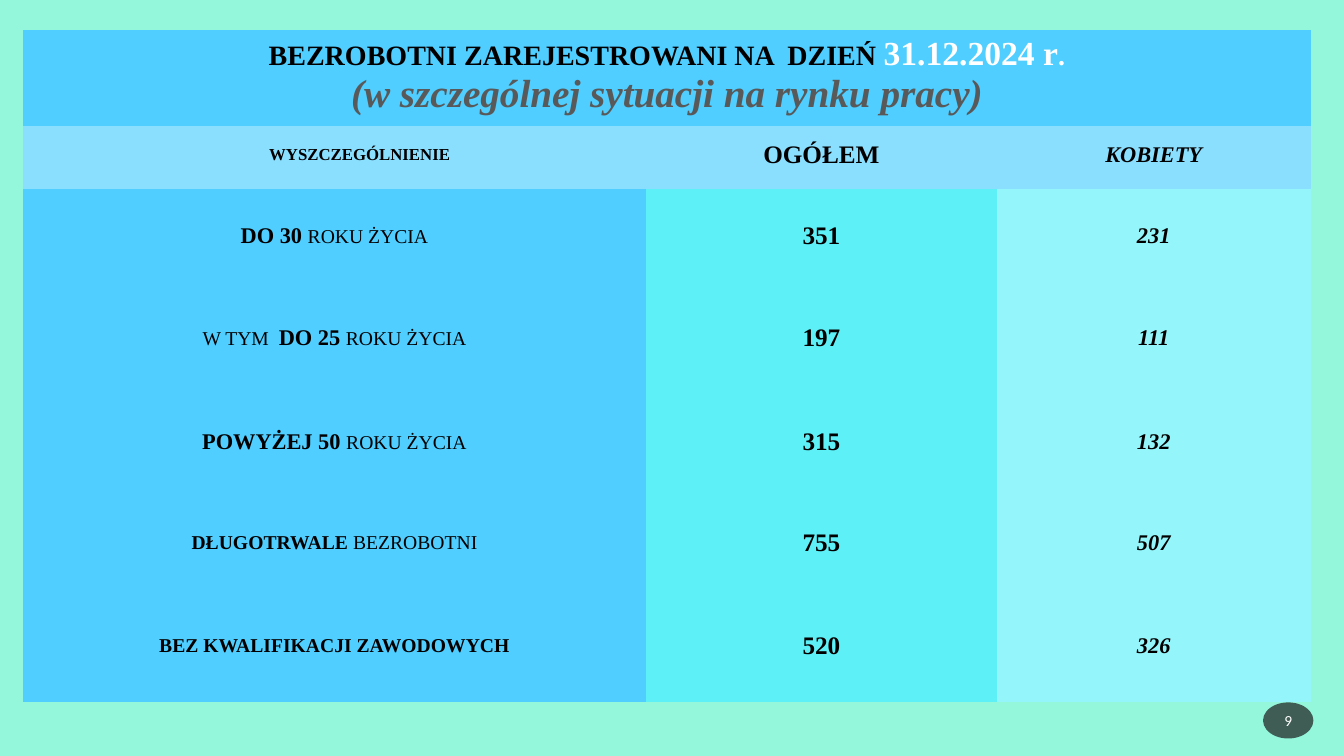
from lxml import etree
from pptx import Presentation
from pptx.dml.color import RGBColor
from pptx.enum.shapes import MSO_SHAPE
from pptx.enum.text import MSO_ANCHOR, PP_ALIGN
from pptx.oxml.ns import qn
from pptx.util import Cm, Pt

OVAL = MSO_SHAPE.OVAL
MIDDLE = MSO_ANCHOR.MIDDLE
CENTER = PP_ALIGN.CENTER
BLANK_LAYOUT = 6
PLAIN_TABLE_STYLE = "{2D5ABB26-0587-4C30-8999-92F81FD0307C}"

MINT, SKY, PALE_SKY = "94F7DC", "4FCEFF", "8ADFFF"
AQUA, PALE_AQUA = "5EF0F7", "94F5FA"
BLACK, WHITE, GREY, CHARCOAL = "000000", "FFFFFF", "595959", "1D1D1D"

COLUMN_WIDTHS = [15.7, 8.84, 7.91]
ROW_HEIGHTS = [2.41, 1.58, 2.49, 2.67, 2.56, 2.51, 2.7]
COLUMN_FILLS = [SKY, AQUA, PALE_AQUA]

BOLD = {"size": Pt(14), "bold": True}
BIG_BOLD = {"size": Pt(16), "bold": True}
PLAIN = {"size": Pt(14), "bold": False}
TOTAL = {"size": Pt(18), "bold": True}
WOMEN = {"size": Pt(16), "bold": True, "italic": True}

TITLE = [
    [("BEZROBOTNI ZAREJESTROWANI NA  DZIEŃ ", {"size": Pt(20), "bold": True}, BLACK),
     ("31.12.2024 r", {"size": Pt(24), "bold": True}, WHITE),
     (".", {"size": Pt(20), "bold": True}, WHITE)],
    [("(w szczególnej sytuacji na rynku pracy)",
      {"size": Pt(28), "bold": True, "italic": True}, GREY)],
]
HEADINGS = [
    ("WYSZCZEGÓLNIENIE", {"size": Pt(12), "bold": True}),
    ("OGÓŁEM", TOTAL),
    ("KOBIETY", WOMEN),
]
GROUPS = [
    ([("DO 30 ", BIG_BOLD), ("ROKU ŻYCIA", PLAIN)], "351", "231"),
    ([("W TYM  ", PLAIN), ("DO 25 ", BIG_BOLD), ("ROKU ŻYCIA", PLAIN)], "197", "111"),
    ([("POWYŻEJ 50 ", BIG_BOLD), ("ROKU ŻYCIA", PLAIN)], "315", "132"),
    ([("DŁUGOTRWALE", BOLD), (" BEZROBOTNI", PLAIN)], "755", "507"),
    ([("BEZ KWALIFIKACJI ZAWODOWYCH", BOLD)], "520", "326"),
]


def assign(target, values):
    for name, value in values.items():
        setattr(target, name, value)


def paint(fill, color):
    fill.solid()
    fill.fore_color.rgb = RGBColor.from_string(color)


class SlideBuilder:
    font = "Times New Roman"
    cell_format = {
        "vertical_anchor": MIDDLE,
        "margin_left": Cm(0.03), "margin_right": Cm(0.03),
        "margin_top": Cm(0.03), "margin_bottom": Cm(0.13),
    }

    def __init__(self, deck, background):
        self.slide = deck.slides.add_slide(deck.slide_layouts[BLANK_LAYOUT])
        paint(self.slide.background.fill, background)

    def add_lines(self, frame, lines, font=None):
        for index, line in enumerate(lines):
            para = frame.add_paragraph() if index else frame.paragraphs[0]
            para.alignment = CENTER
            for text, values, *color in line:
                span = para.add_run()
                span.text = text
                assign(span.font, {"name": font or self.font, **values})
                paint(span.font.fill, color[0] if color else BLACK)

    def add_table(self, left, top, widths, heights):
        frame = self.slide.shapes.add_table(
            len(heights), len(widths), Cm(left), Cm(top),
            Cm(sum(widths)), Cm(sum(heights)))
        table = frame.table
        assign(table, {"first_row": False, "horz_banding": False})
        table._tbl.tblPr.find(qn("a:tableStyleId")).text = PLAIN_TABLE_STYLE
        for column, width in zip(table.columns, widths):
            column.width = Cm(width)
        for row, height in zip(table.rows, heights):
            row.height = Cm(height)
        return table

    def fill_cell(self, cell, lines, color):
        assign(cell, self.cell_format)
        paint(cell.fill, color)
        self.add_lines(cell.text_frame, lines)

    def add_badge(self, left, top, width, height, text, color, opacity):
        shape = self.slide.shapes.add_shape(
            OVAL, Cm(left), Cm(top), Cm(width), Cm(height))
        shape.shadow.inherit = False
        paint(shape.fill, color)
        shape.line.fill.background()
        tint = shape._element.spPr.find(qn("a:solidFill"))[0]
        etree.SubElement(tint, qn("a:alpha")).set("val", str(opacity * 1000))
        assign(shape.text_frame, {
            "vertical_anchor": MIDDLE, "word_wrap": True,
            "margin_left": Cm(0.05), "margin_right": Cm(0.05)})
        self.add_lines(shape.text_frame, [[(text, {"size": Pt(11)}, WHITE)]], "Calibri")


def main():
    deck = Presentation()
    assign(deck, {"slide_width": Cm(33.87), "slide_height": Cm(19.05)})
    page = SlideBuilder(deck, MINT)

    table = page.add_table(0.58, 0.76, COLUMN_WIDTHS, ROW_HEIGHTS)
    table.cell(0, 0).merge(table.cell(0, 2))
    page.fill_cell(table.cell(0, 0), TITLE, SKY)
    for column, heading in enumerate(HEADINGS):
        page.fill_cell(table.cell(1, column), [[heading]], PALE_SKY)
    label = table.cell(1, 0).text_frame.paragraphs[0]
    label.level = 1
    label._p.get_or_add_pPr().set("marL", str(Cm(1.27)))

    for row, (group, total, women) in enumerate(GROUPS, start=2):
        contents = [group, [(total, TOTAL)], [(women, WOMEN)]]
        for column, (line, color) in enumerate(zip(contents, COLUMN_FILLS)):
            page.fill_cell(table.cell(row, column), [line], color)

    page.add_badge(31.83, 17.7, 1.27, 0.91, "9", CHARCOAL, 70)
    deck.save("out.pptx")


if __name__ == "__main__":
    main()
